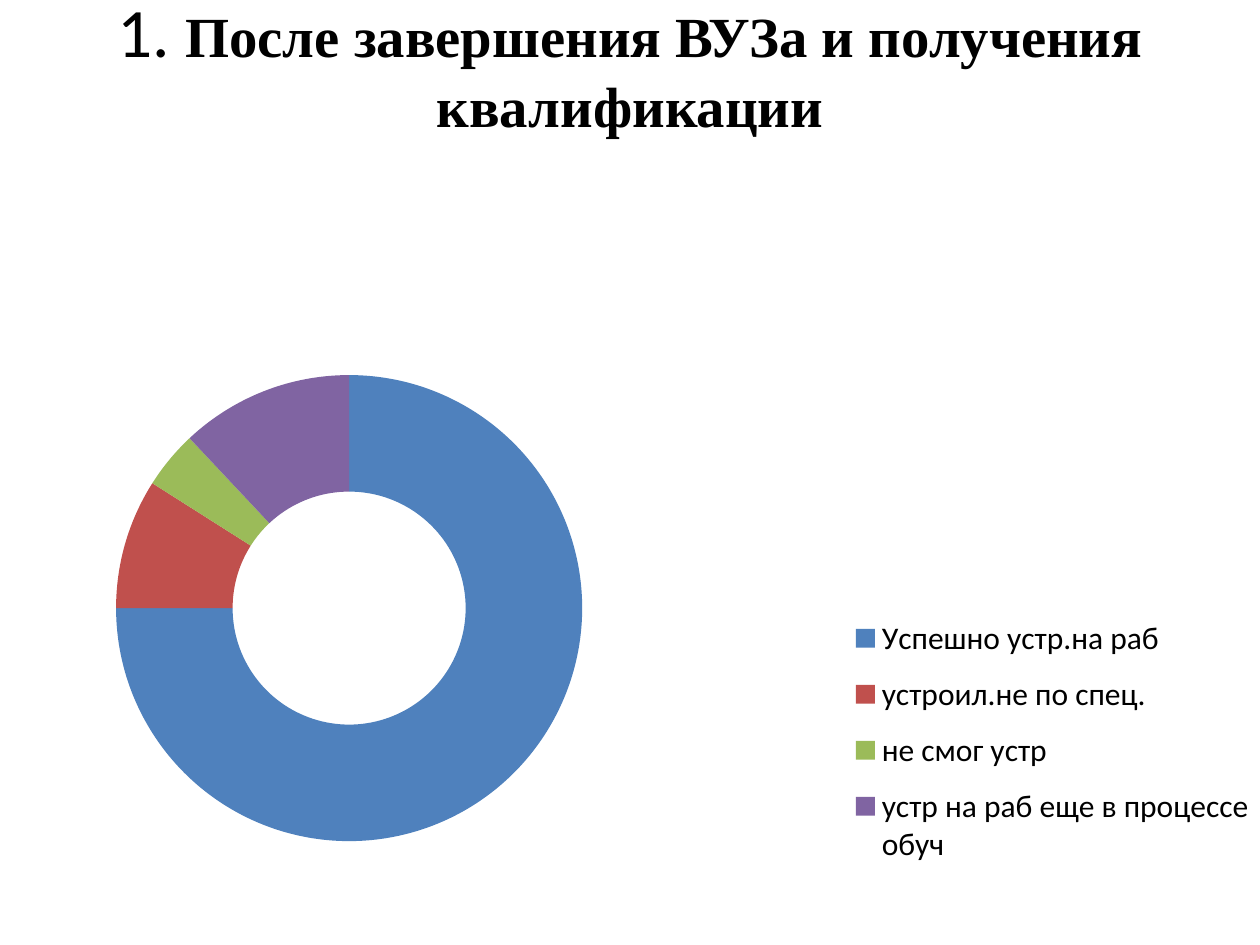
from typing import Any, NamedTuple

from lxml.etree import SubElement
from pptx import Presentation
from pptx.chart.data import CategoryChartData
from pptx.dml.color import RGBColor
from pptx.enum.chart import XL_CHART_TYPE as ChartType, XL_LEGEND_POSITION as LegendPosition
from pptx.enum.text import MSO_ANCHOR as Anchor, PP_ALIGN as Align
from pptx.oxml.ns import qn
from pptx.util import Inches, Pt

COLORS = {
    "text": "000000",
    "blue": "4F81BD",
    "red": "C0504D",
    "green": "9BBB59",
    "purple": "8064A2",
}


class Box(NamedTuple):
    left: float
    top: float
    width: float
    height: float


class TitleRun(NamedTuple):
    text: str
    font: dict[str, Any]


class Sector(NamedTuple):
    label: str
    value: int
    color: str


TITLE_BOX = Box(0.75, 0.23, 8.5, 0.55)
CHART_BOX = Box(0.31, 1.41, 9.69, 5.7)
PLOT_SHARE = Box(0.016, 0.275, 0.476, 0.649)
LEGEND_SHARE = Box(0.66, 0.59, 0.34, 0.39)

TITLE_RUNS = [
    TitleRun("1. ", {"name": "Calibri", "size": Pt(39.6), "bold": False}),
    TitleRun(
        "После завершения ВУЗа и получения квалификации",
        {"name": "Times New Roman", "size": Pt(32.4), "bold": True},
    ),
]
SECTORS = [
    Sector("Успешно устр.на раб", 75, "blue"),
    Sector("устроил.не по спец.", 9, "red"),
    Sector("не смог устр", 4, "green"),
    Sector("устр на раб еще в процессе обуч", 12, "purple"),
]


def color(name: str) -> RGBColor:
    """Return the named colour."""
    return RGBColor.from_string(COLORS[name])


def apply_format(target: Any, values: dict[str, Any]) -> None:
    """Set every attribute in a dict of format values."""
    for name, value in values.items():
        setattr(target, name, value)


def inches(box: Box) -> list[Inches]:
    """Return the sides of a box as lengths."""
    return [Inches(side) for side in box]


def set_layout(element: Any, share: Box, inner: bool = False) -> None:
    """Place a chart part by its share of the chart area."""
    layout = element.find(qn("c:layout"))
    if layout is None:
        layout = SubElement(element, qn("c:layout"))
        anchor = element.find(qn("c:legendPos"))
        if anchor is None:
            element.insert(0, layout)
        else:
            anchor.addnext(layout)
    manual = SubElement(layout, qn("c:manualLayout"))
    settings = {"layoutTarget": "inner"} if inner else {}
    settings |= {"xMode": "edge", "yMode": "edge"}
    settings |= dict(zip("xywh", map(str, share)))
    for tag, value in settings.items():
        SubElement(manual, qn(f"c:{tag}")).set("val", value)


def add_title(slide: Any, box: Box, runs: list[TitleRun]) -> None:
    """Add the centred title with its differently formatted runs."""
    frame = slide.shapes.add_textbox(*inches(box)).text_frame
    apply_format(frame, {"word_wrap": True, "vertical_anchor": Anchor.MIDDLE})
    paragraph = frame.paragraphs[0]
    paragraph.alignment = Align.CENTER
    for item in runs:
        run = paragraph.add_run()
        run.text = item.text
        apply_format(run.font, item.font)
        run.font.color.rgb = color("text")


def add_doughnut(slide: Any, box: Box, sectors: list[Sector]) -> None:
    """Add the doughnut chart with its legend at the right."""
    data = CategoryChartData()
    data.categories = [sector.label for sector in sectors]
    data.add_series("Series 1", [sector.value for sector in sectors])
    chart = slide.shapes.add_chart(ChartType.DOUGHNUT, *inches(box), data).chart
    apply_format(chart, {"has_title": False, "has_legend": True})
    apply_format(chart.font, {"name": "Calibri", "size": Pt(18)})
    chart.font.color.rgb = color("text")
    apply_format(chart.legend, {"position": LegendPosition.RIGHT, "include_in_layout": False})

    plot = chart.plots[0]
    plot.vary_by_categories = True
    for index, sector in enumerate(sectors):
        point_format = plot.series[0].points[index].format
        point_format.fill.solid()
        point_format.fill.fore_color.rgb = color(sector.color)
        point_format.line.fill.background()

    plot_area = chart.element.find(f".//{qn('c:plotArea')}")
    plot_area.find(f".//{qn('c:holeSize')}").set("val", "50")
    set_layout(plot_area, PLOT_SHARE, inner=True)
    set_layout(chart.element.find(f".//{qn('c:legend')}"), LEGEND_SHARE)


def main() -> None:
    """Build and save the slide."""
    presentation = Presentation()
    apply_format(presentation, {"slide_width": Inches(10), "slide_height": Inches(7.5)})
    slide = presentation.slides.add_slide(presentation.slide_layouts[6])
    add_title(slide, TITLE_BOX, TITLE_RUNS)
    add_doughnut(slide, CHART_BOX, SECTORS)
    presentation.save("out.pptx")


if __name__ == "__main__":
    main()
